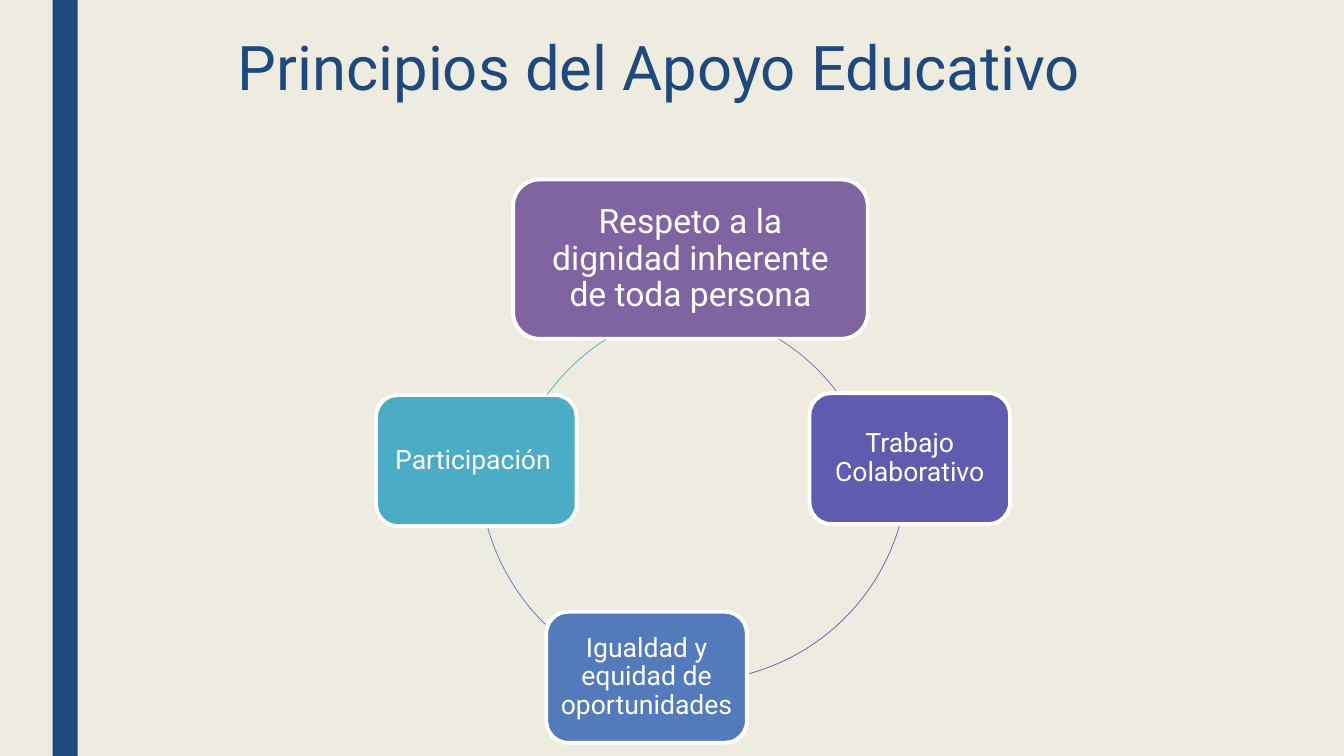
from dataclasses import dataclass

from pptx import Presentation
from pptx.dml.color import RGBColor
from pptx.enum import shapes, text
from pptx.util import Pt

COLORS = {
    "background": "EEECE1",
    "navy": "1F497D",
    "white": "FFFFFF",
    "purple": "8064A2",
    "indigo": "5F5BAE",
    "blue": "537ABA",
    "teal": "4BACC6",
}
FONT = "Roboto"
SLIDE_WIDTH, SLIDE_HEIGHT = 960, 540
CYCLE_DIAMETER = 308.9


@dataclass(frozen=True)
class Principle:
    wording: str
    color: str
    left: float
    top: float
    width: float = 143.3
    height: float = 93.6
    font_size: float = 19


@dataclass(frozen=True)
class CycleArc:
    color: str
    left: float
    top: float
    start_degrees: float
    end_degrees: float


PRINCIPLES = [
    Principle("Respeto a la dignidad inherente de toda persona", "purple",
              366.5, 128.2, 253.4, 113.8, 24),
    Principle("Trabajo Colaborativo", "indigo", 578.2, 280.8),
    Principle("Igualdad y equidad de oportunidades", "blue", 390.2, 437),
    Principle("Participación ", "teal", 268.6, 282.2),
]
CYCLE_ARCS = [
    CycleArc("purple", 320.4, 218.9, 301.9, 322.9),
    CycleArc("indigo", 339.8, 177.8, 16.3, 74.8),
    CycleArc("blue", 342.7, 180.7, 134.1, 164.5),
    CycleArc("teal", 361.4, 218.2, 215.9, 237.5),
]


def rgb(color: str) -> RGBColor:
    return RGBColor.from_string(COLORS[color])


def write(frame, wording: str, size: float, color: str, spacing: float, align) -> None:
    frame.word_wrap = True
    paragraph = frame.paragraphs[0]
    paragraph.text = wording
    paragraph.alignment = align
    paragraph.line_spacing = spacing
    paragraph.font.name = FONT
    paragraph.font.size = Pt(size)
    paragraph.font.color.rgb = rgb(color)


def draw_side_band(slide) -> None:
    band = slide.shapes.add_shape(
        shapes.MSO_SHAPE.RECTANGLE, Pt(37.5), 0, Pt(18), Pt(SLIDE_HEIGHT))
    band.shadow.inherit = False
    band.fill.solid()
    band.fill.fore_color.rgb = rgb("navy")
    band.line.fill.background()


def draw_title(slide) -> None:
    title = slide.shapes.add_textbox(Pt(162.7), Pt(23.8), Pt(632.9), Pt(90))
    write(title.text_frame, "Principios del Apoyo Educativo", 44, "navy", 0.89,
          text.PP_ALIGN.LEFT)


def draw_principle(slide, principle: Principle) -> None:
    box = slide.shapes.add_shape(
        shapes.MSO_SHAPE.ROUNDED_RECTANGLE, Pt(principle.left), Pt(principle.top),
        Pt(principle.width), Pt(principle.height))
    box.shadow.inherit = False
    box.fill.solid()
    box.fill.fore_color.rgb = rgb(principle.color)
    box.line.color.rgb = rgb("white")
    box.line.width = Pt(2.75)
    frame = box.text_frame
    inset = Pt(principle.font_size * 0.3)
    frame.margin_left = frame.margin_right = inset
    frame.margin_top = frame.margin_bottom = inset
    frame.vertical_anchor = text.MSO_ANCHOR.MIDDLE
    write(frame, principle.wording, principle.font_size, "white", 0.9,
          text.PP_ALIGN.CENTER)


def draw_arc(slide, cycle_arc: CycleArc) -> None:
    arc = slide.shapes.add_shape(
        shapes.MSO_SHAPE.ARC, Pt(cycle_arc.left), Pt(cycle_arc.top),
        Pt(CYCLE_DIAMETER), Pt(CYCLE_DIAMETER))
    arc.shadow.inherit = False
    arc.adjustments[0] = cycle_arc.start_degrees * 0.6
    arc.adjustments[1] = cycle_arc.end_degrees * 0.6
    arc.fill.background()
    arc.line.color.rgb = rgb(cycle_arc.color)
    arc.line.width = Pt(0.5)


def main() -> None:
    deck = Presentation()
    deck.slide_width, deck.slide_height = Pt(SLIDE_WIDTH), Pt(SLIDE_HEIGHT)
    slide = deck.slides.add_slide(deck.slide_layouts[6])
    slide.background.fill.solid()
    slide.background.fill.fore_color.rgb = rgb("background")
    draw_side_band(slide)
    draw_title(slide)
    for principle, cycle_arc in zip(PRINCIPLES, CYCLE_ARCS):
        draw_principle(slide, principle)
        draw_arc(slide, cycle_arc)
    deck.save("out.pptx")


if __name__ == "__main__":
    main()
